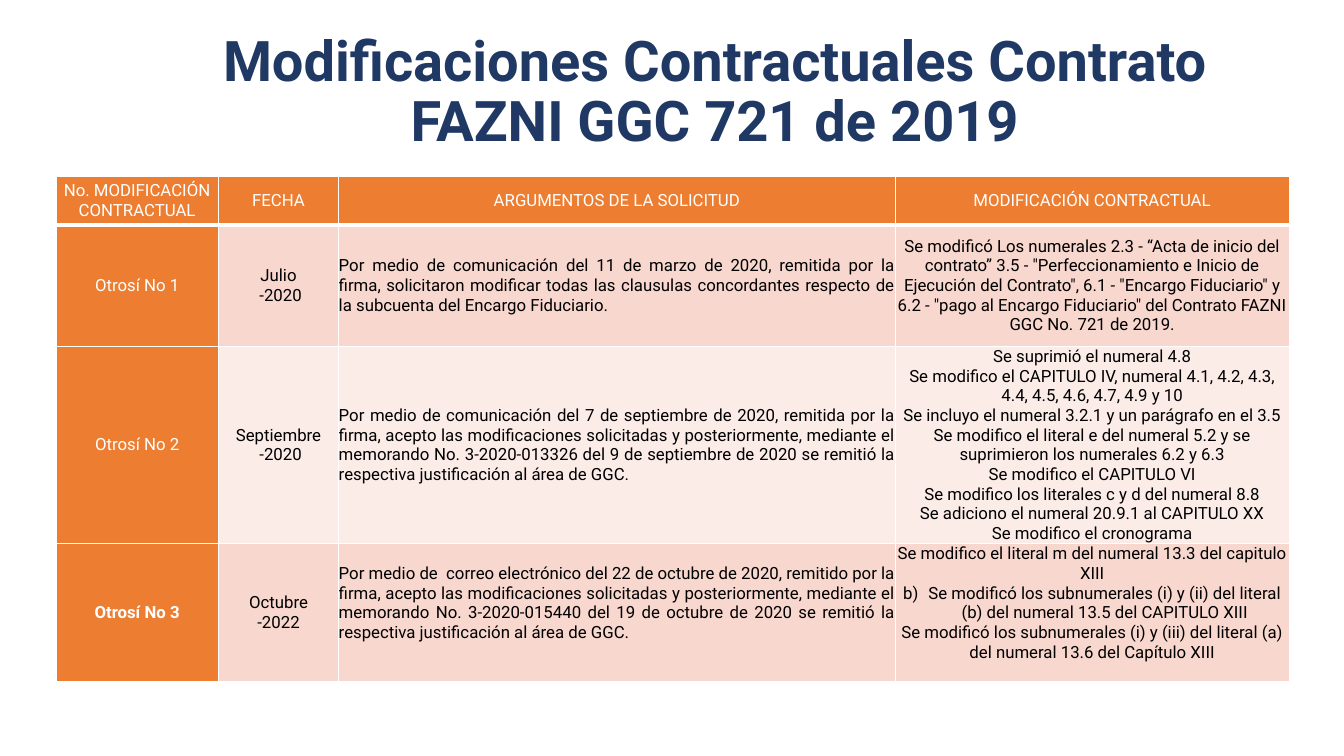
"""Build the slide on contract modifications as a title and a table."""
from dataclasses import dataclass

from lxml.etree import SubElement
from pptx import Presentation
from pptx.dml.color import RGBColor as Color
from pptx.enum.text import MSO_ANCHOR as Anchor, MSO_AUTO_SIZE as AutoSize, PP_ALIGN as Align
from pptx.oxml.ns import qn
from pptx.util import Pt


@dataclass(frozen=True)
class Theme:
    """Colours, font and type sizes of the slide."""
    font: str = "Roboto"
    title_size: int = 40
    table_size: int = 12
    navy: str = "203864"
    orange: str = "ED7D31"
    white: str = "FFFFFF"
    black: str = "000000"
    bands: tuple = ("F8D7CE", "FCECE8")


THEME = Theme()
TITLE = "Modificaciones Contractuales Contrato FAZNI GGC 721 de 2019"
COLUMN_WIDTHS = (116, 86, 397.5, 281.5)
ROW_HEIGHTS = (34.5, 87, 141, 98.5)
LAST_ROW_BOTTOM = 14
LETTERED = "Se modificó los subnumerales (i) y (ii) del literal (b) del numeral 13.5 del CAPITULO XIII"
ROWS = (
    (
        ("No. MODIFICACIÓN CONTRACTUAL",),
        ("FECHA",),
        ("ARGUMENTOS DE LA SOLICITUD",),
        ("MODIFICACIÓN CONTRACTUAL",),
    ),
    (
        ("Otrosí No 1",),
        ("Julio", " -2020"),
        ("Por medio de comunicación del 11 de marzo de 2020, remitida por la firma, solicitaron "
         "modificar todas las clausulas concordantes respecto de la subcuenta del Encargo "
         "Fiduciario.",),
        ('Se modificó Los numerales 2.3 - “Acta de inicio del contrato” 3.5 - "Perfeccionamiento '
         'e Inicio de Ejecución del Contrato", 6.1 - "Encargo Fiduciario" y 6.2 - "pago al '
         'Encargo Fiduciario" del Contrato FAZNI GGC No. 721 de 2019.',),
    ),
    (
        ("Otrosí No 2",),
        ("Septiembre", " -2020"),
        ("Por medio de comunicación del 7 de septiembre de 2020, remitida por la firma, acepto las "
         "modificaciones solicitadas y posteriormente, mediante el memorando No. 3-2020-013326 "
         "del 9 de septiembre de 2020 se remitió la respectiva justificación al área de GGC.",),
        (
            "Se suprimió el numeral 4.8",
            "Se modifico el CAPITULO IV, numeral 4.1, 4.2, 4.3, 4.4, 4.5, 4.6, 4.7, 4.9 y 10",
            "Se incluyo el numeral 3.2.1 y un parágrafo en el 3.5",
            "Se modifico el literal e del numeral 5.2 y se suprimieron los numerales 6.2 y 6.3",
            "Se modifico el CAPITULO VI",
            "Se modifico los literales c y d del numeral 8.8",
            "Se adiciono el numeral 20.9.1 al CAPITULO XX",
            "Se modifico el cronograma",
        ),
    ),
    (
        ("Otrosí No 3",),
        ("Octubre", "-2022"),
        ("Por medio de  correo electrónico del 22 de octubre de 2020, remitido por la firma, acepto "
         "las modificaciones solicitadas y posteriormente, mediante el memorando No. "
         "3-2020-015440 del 19 de octubre de 2020 se remitió la respectiva justificación al área "
         "de GGC.",),
        (
            "Se modifico el literal m del numeral 13.3 del capitulo XIII",
            LETTERED,
            "Se modificó los subnumerales (i) y (iii) del literal (a) del numeral 13.6 del "
            "Capítulo XIII",
        ),
    ),
)


def apply(target, values):
    """Set each attribute of the target from a dict."""
    for name, value in values.items():
        setattr(target, name, value)


def style_font(font, size, color, bold):
    """Give a font the theme face and the given look."""
    apply(font, {"name": THEME.font, "size": Pt(size), "bold": bold})
    font.color.rgb = Color.from_string(color)


def add_letter(paragraph, start):
    """Number a paragraph with a lower-case letter and a hanging indent."""
    properties = paragraph._p.get_or_add_pPr()
    properties.set("marL", str(Pt(18)))
    properties.set("indent", str(-Pt(18)))
    SubElement(properties, qn("a:buAutoNum"), type="alphaLcParenR", startAt=str(start))


def add_borders(cell, bottom):
    """Draw white lines on the four sides of a cell."""
    properties = cell._tc.get_or_add_tcPr()
    for side, width in {"L": 1, "R": 1, "T": 1, "B": bottom}.items():
        line = SubElement(properties, qn(f"a:ln{side}"), w=str(Pt(width)))
        fill = SubElement(line, qn("a:solidFill"))
        SubElement(fill, qn("a:srgbClr"), val=THEME.white)


def fill_cell(cell, texts, fill, color, align, bold=False):
    """Write the paragraphs of a cell and colour it."""
    apply(cell, {"margin_left": 0, "margin_right": 0, "margin_top": 0, "margin_bottom": 0,
                 "vertical_anchor": Anchor.MIDDLE})
    cell.fill.solid()
    cell.fill.fore_color.rgb = Color.from_string(fill)
    frame = cell.text_frame
    for index, text in enumerate(texts):
        paragraph = frame.add_paragraph() if index else frame.paragraphs[0]
        paragraph.alignment = align
        if text == LETTERED:
            add_letter(paragraph, 2)
        run = paragraph.add_run()
        run.text = text
        style_font(run.font, THEME.table_size, color, bold)


def add_title(slide):
    """Place and format the title placeholder."""
    title = slide.shapes.title
    apply(title, {"left": Pt(136), "top": Pt(47.5), "width": Pt(749), "height": Pt(66)})
    frame = title.text_frame
    apply(frame, {"text": TITLE, "word_wrap": True, "auto_size": AutoSize.NONE,
                  "vertical_anchor": Anchor.BOTTOM})
    paragraph = frame.paragraphs[0]
    apply(paragraph, {"alignment": Align.CENTER, "line_spacing": 0.9})
    style_font(paragraph.runs[0].font, THEME.title_size, THEME.navy, True)


def add_modifications_table(slide):
    """Add the table of contract modifications."""
    table = slide.shapes.add_table(
        len(ROWS), len(COLUMN_WIDTHS), Pt(40), Pt(126),
        Pt(sum(COLUMN_WIDTHS)), Pt(sum(ROW_HEIGHTS))).table
    for column, width in zip(table.columns, COLUMN_WIDTHS):
        column.width = Pt(width)
    last = len(ROWS) - 1
    for row_index, (texts_by_column, height) in enumerate(zip(ROWS, ROW_HEIGHTS)):
        table.rows[row_index].height = Pt(height)
        for column_index, texts in enumerate(texts_by_column):
            cell = table.cell(row_index, column_index)
            heading = row_index == 0 or column_index == 0
            add_borders(cell, 1 if row_index else 3)
            fill_cell(
                cell, texts,
                fill=THEME.orange if heading else THEME.bands[(row_index - 1) % 2],
                color=THEME.white if heading else THEME.black,
                align=Align.JUSTIFY if column_index == 2 and row_index else Align.CENTER,
                bold=row_index == last and column_index == 0)
            if row_index == last and column_index >= 2:
                cell.margin_bottom = Pt(LAST_ROW_BOTTOM)


def main():
    """Build and save the presentation."""
    presentation = Presentation()
    apply(presentation, {"slide_width": Pt(960), "slide_height": Pt(540)})
    slide = presentation.slides.add_slide(presentation.slide_layouts[5])
    add_title(slide)
    add_modifications_table(slide)
    presentation.save("out.pptx")


if __name__ == "__main__":
    main()
